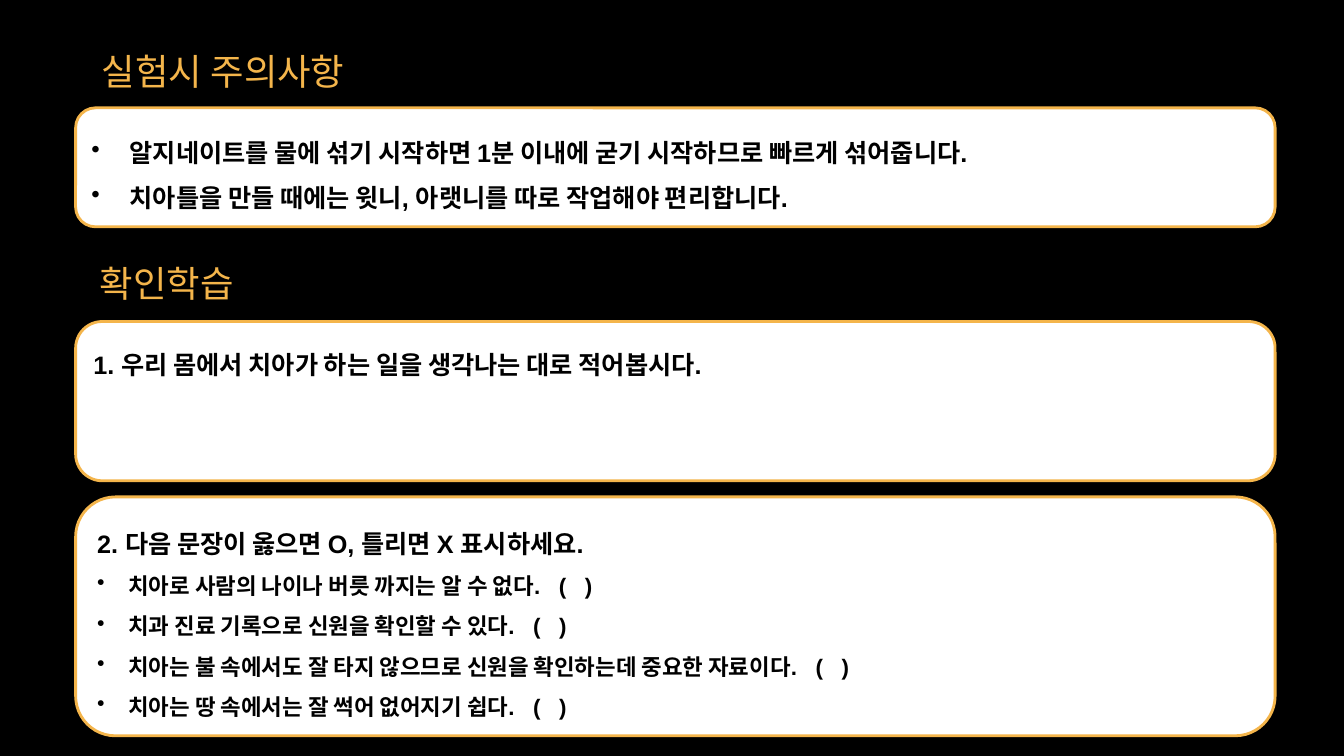
import dataclasses

import pptx
import pptx.dml.color
import pptx.enum.shapes
import pptx.enum.text
import pptx.oxml
import pptx.oxml.ns
import pptx.util

ANCHOR = pptx.enum.text.MSO_ANCHOR


def rgb(code):
    return pptx.dml.color.RGBColor.from_string(code)


@dataclasses.dataclass(frozen=True)
class Theme:
    back: str = "000000"
    gold: str = "F4B54B"
    card: str = "FFFFFF"
    ink: str = "000000"
    head_font: str = "League Spartan"
    body_font: str = "Arial"
    head: int = 26
    body: int = 18
    item: int = 16
    edge: int = 2
    lead: float = 1.5


class Sheet:
    """Style and current slide; lengths are on a grid of 100 columns by 100 rows."""

    def __init__(self, deck, theme):
        self.theme = theme
        self.col = deck.slide_width / 100
        self.row = deck.slide_height / 100
        self.slide = deck.slides.add_slide(deck.slide_layouts[5])
        fill = self.slide.background.fill
        fill.solid()
        fill.fore_color.rgb = rgb(theme.back)

    def area(self, left, top, width, height):
        return [int(left * self.col), int(top * self.row),
                int(width * self.col), int(height * self.row)]

    def run(self, para, text, font, size, color, bold=False):
        run = para.add_run()
        run.text = text
        run.font.name = font
        run.font.size = pptx.util.Pt(size)
        run.font.bold = bold
        run.font.color.rgb = rgb(color)

    def head(self, text, shape):
        frame = shape.text_frame
        frame.word_wrap = True
        frame.auto_size = pptx.enum.text.MSO_AUTO_SIZE.NONE
        frame.vertical_anchor = ANCHOR.TOP
        pad = pptx.util.Inches(0.1)
        frame.margin_left = frame.margin_right = pad
        frame.margin_top = frame.margin_bottom = pad
        para = frame.paragraphs[0]
        para.alignment = pptx.enum.text.PP_ALIGN.LEFT
        self.run(para, text, self.theme.head_font, self.theme.head, self.theme.gold)

    def title(self, text, *area):
        shape = self.slide.shapes.title
        shape.left, shape.top, shape.width, shape.height = self.area(*area)
        self.head(text, shape)

    def label(self, text, *area):
        self.head(text, self.slide.shapes.add_textbox(*self.area(*area)))

    def bullet(self, para, indent):
        props = para._p.get_or_add_pPr()
        step = pptx.util.Inches(indent)
        props.set("marL", str(step))
        props.set("indent", str(-step))
        mark = pptx.oxml.parse_xml(
            f'<a:buChar {pptx.oxml.ns.nsdecls("a")} char="•"/>')
        props.append(mark)

    def card(self, top, height, lines, anchor=ANCHOR.TOP):
        """Draw a rounded card; each line is (text, size, bullet indent)."""
        theme = self.theme
        shape = self.slide.shapes.add_shape(
            pptx.enum.shapes.MSO_SHAPE.ROUNDED_RECTANGLE,
            *self.area(5.63, top, 89.25, height))
        shape.shadow.inherit = False
        shape.fill.solid()
        shape.fill.fore_color.rgb = rgb(theme.card)
        shape.line.color.rgb = rgb(theme.gold)
        shape.line.width = pptx.util.Pt(theme.edge)
        frame = shape.text_frame
        frame.word_wrap = True
        frame.vertical_anchor = anchor
        for rank, (text, size, indent) in enumerate(lines):
            para = frame.add_paragraph() if rank else frame.paragraphs[0]
            para.alignment = pptx.enum.text.PP_ALIGN.LEFT
            para.line_spacing = theme.lead
            if indent:
                self.bullet(para, indent)
            self.run(para, text, theme.body_font, size, theme.ink, True)


def main():
    deck = pptx.Presentation()
    deck.slide_width = pptx.util.Inches(13.33)
    deck.slide_height = pptx.util.Inches(7.5)
    theme = Theme()
    sheet = Sheet(deck, theme)

    notes = [
        "알지네이트를 물에 섞기 시작하면 1분 이내에 굳기 시작하므로 빠르게 섞어줍니다.",
        "치아틀을 만들 때에는 윗니, 아랫니를 따로 작업해야 편리합니다.",
    ]
    claims = [
        "치아로 사람의 나이나 버릇 까지는 알 수 없다.",
        "치과 진료 기록으로 신원을 확인할 수 있다.",
        "치아는 불 속에서도 잘 타지 않으므로 신원을 확인하는데 중요한 자료이다.",
        "치아는 땅 속에서는 잘 썩어 없어지기 쉽다.",
    ]
    sheet.title("실험시 주의사항", 6.83, 5.2, 30.16, 6.4)
    sheet.card(14.27, 15.73, [(note, theme.body, 0.38) for note in notes],
               ANCHOR.MIDDLE)
    sheet.label("확인학습", 6.68, 33.2, 30.16, 6.4)
    sheet.card(42.53, 21.07, [
        ("1. 우리 몸에서 치아가 하는 일을 생각나는 대로 적어봅시다.", theme.body, 0)])
    sheet.card(65.73, 31.6, [
        ("2. 다음 문장이 옳으면 O, 틀리면 X 표시하세요.", theme.body, 0),
        *((f"{claim}   (   )", theme.item, 0.31) for claim in claims)])
    deck.save("out.pptx")


if __name__ == "__main__":
    main()
